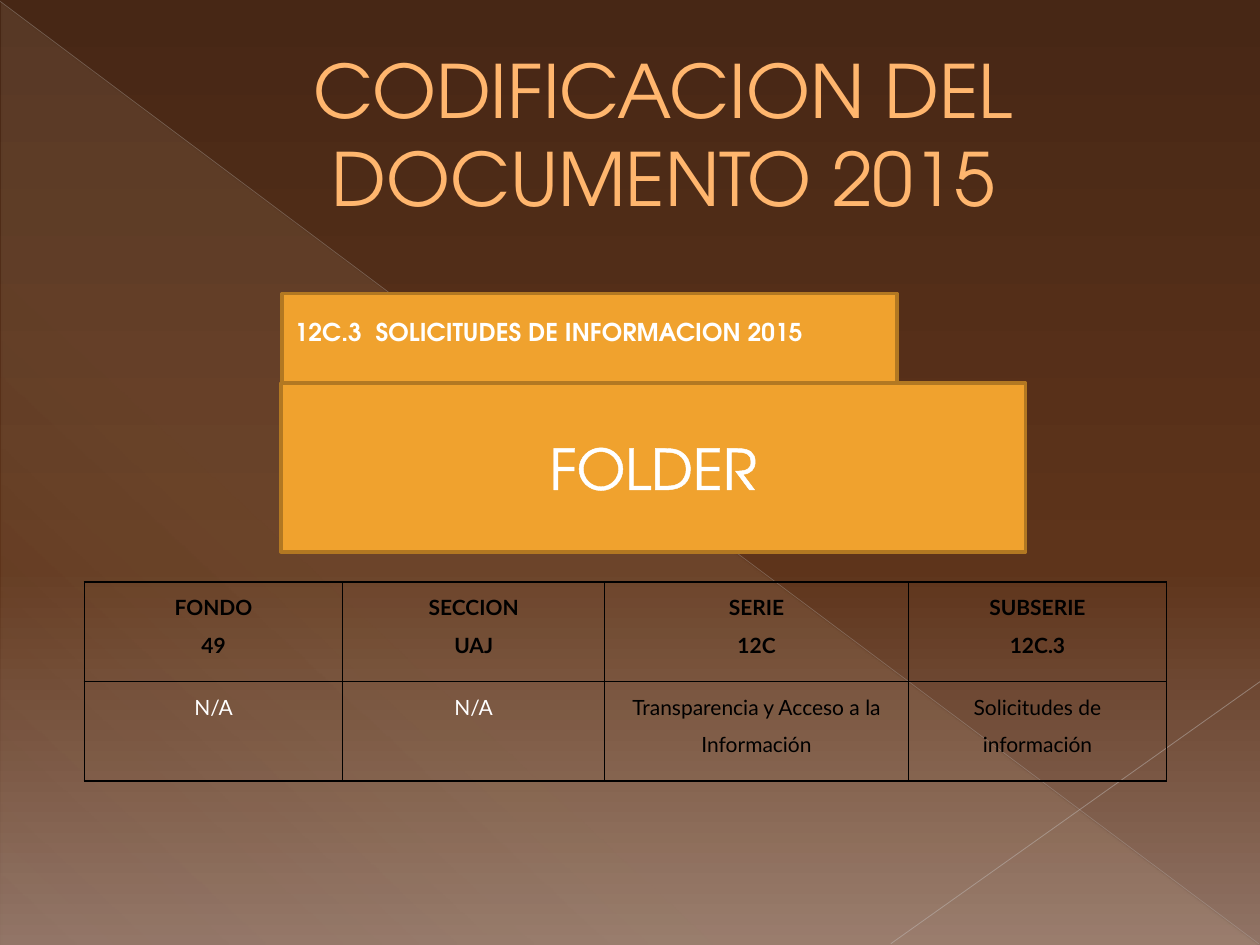
from lxml.etree import SubElement
from pptx import Presentation
from pptx.dml.color import RGBColor
from pptx.enum.shapes import MSO_CONNECTOR, MSO_SHAPE
from pptx.enum.text import MSO_ANCHOR, PP_ALIGN
from pptx.oxml.ns import qn
from pptx.util import Inches, Pt

HEADING_FONT = "TeX Gyre Adventor"
TABLE_FONT = "Lato"

BLACK = RGBColor(0x00, 0x00, 0x00)
WHITE = RGBColor(0xFF, 0xFF, 0xFF)
PEACH = RGBColor(0xFF, 0xB6, 0x6E)
TITLE_EDGE = RGBColor(0xA6, 0x70, 0x20)
FOLDER_FILL = RGBColor(0xF0, 0xA2, 0x2E)
FOLDER_EDGE = RGBColor(0xB2, 0x78, 0x22)
CREAM = RGBColor(0xFB, 0xEE, 0xC9)
DIAGONAL_GREY = RGBColor(0xBC, 0xB7, 0xB4)
CORNER_GREY = RGBColor(0xC4, 0xBF, 0xBD)
BROWN_DARK = RGBColor(0x47, 0x27, 0x15)
BROWN = RGBColor(0x5E, 0x34, 0x1B)
BROWN_LIGHT = RGBColor(0x90, 0x73, 0x65)

COLUMN_WIDTHS = [2.05, 2.08, 2.41, 2.05]
ROW_HEIGHT = 0.79
HEADERS = ["FONDO\n49", "SECCION\nUAJ", "SERIE\n12C", "SUBSERIE\n12C.3"]
VALUES = [
    ("N/A", WHITE),
    ("N/A", WHITE),
    ("Transparencia y Acceso a la Información", BLACK),
    ("Solicitudes de información", BLACK),
]


def add_color(parent, color, opacity=100):
    element = SubElement(parent, qn("a:srgbClr"), val=str(color))
    if opacity < 100:
        SubElement(element, qn("a:alpha"), val=str(opacity * 1000))


def set_gradient(fill, owner, stops, angle):
    """Fill with (position, colour, opacity) stops at a clockwise angle."""
    fill.gradient()
    gradient = owner.find(".//" + qn("a:gradFill"))
    gradient.find(qn("a:lin")).set("ang", str(angle * 60000))
    stop_list = gradient.find(qn("a:gsLst"))
    stop_list.clear()
    for position, color, opacity in stops:
        stop = SubElement(stop_list, qn("a:gs"), pos=str(position * 1000))
        add_color(stop, color, opacity)


def format_text(text_frame, font_name, size, color, bold=False, align=PP_ALIGN.CENTER):
    for paragraph in text_frame.paragraphs:
        paragraph.alignment = align
        for run in paragraph.runs:
            run.font.name = font_name
            run.font.size = Pt(size)
            run.font.bold = bold
            run.font.color.rgb = color


def outline_text(text_frame, color, width):
    for paragraph in text_frame.paragraphs:
        for run in paragraph.runs:
            properties = run.font._element
            line = SubElement(properties, qn("a:ln"), w=str(Pt(width)))
            add_color(SubElement(line, qn("a:solidFill")), color)
            properties.insert(0, line)


def add_line(slide, start, end, color, width, opacity):
    points = [Inches(value) for value in (*start, *end)]
    connector = slide.shapes.add_connector(MSO_CONNECTOR.STRAIGHT, *points)
    connector.line.color.rgb = color
    connector.line.width = Pt(width)
    properties = connector._element.spPr
    color_element = properties.find(".//" + qn("a:srgbClr"))
    SubElement(color_element, qn("a:alpha"), val=str(opacity * 1000))
    SubElement(properties, qn("a:effectLst"))


def add_backdrop(slide):
    set_gradient(
        slide.background.fill, slide._element,
        [(0, BROWN_DARK, 100), (60, BROWN, 100), (100, BROWN_LIGHT, 100)], 90,
    )
    triangle = slide.shapes.add_shape(
        MSO_SHAPE.RIGHT_TRIANGLE, Inches(0.01), Inches(0.02), Inches(9.98), Inches(7.48)
    )
    triangle.shadow.inherit = False
    triangle.line.fill.background()
    set_gradient(
        triangle.fill, triangle._element,
        [(0, CREAM, 10), (70, CREAM, 8), (100, CREAM, 1)], 133,
    )
    add_line(slide, (0, 0.01), (9.99, 7.49), DIAGONAL_GREY, 0.39, 35)
    add_line(slide, (10, 5.41), (7.07, 7.49), CORNER_GREY, 0.47, 45)


def add_title(slide, text):
    title = slide.shapes.title
    title.left, title.top = Inches(0.5), Inches(0.29)
    title.width, title.height = Inches(9), Inches(1.53)
    text_frame = title.text_frame
    text_frame.text = text
    text_frame.vertical_anchor = MSO_ANCHOR.MIDDLE
    format_text(text_frame, HEADING_FONT, 42, PEACH)
    outline_text(text_frame, TITLE_EDGE, 0.5)
    indent = text_frame.paragraphs[0]._p.get_or_add_pPr()
    indent.set("marL", str(Inches(0.53)))
    indent.set("indent", "0")
    # The title stands in front of the backdrop.
    slide.shapes._spTree.append(title._element)


def add_folder_part(slide, left, top, width, height, text):
    shape = slide.shapes.add_shape(
        MSO_SHAPE.RECTANGLE, Inches(left), Inches(top), Inches(width), Inches(height)
    )
    shape.shadow.inherit = False
    shape.fill.solid()
    shape.fill.fore_color.rgb = FOLDER_FILL
    shape.line.color.rgb = FOLDER_EDGE
    shape.line.width = Pt(2)
    text_frame = shape.text_frame
    text_frame.text = text
    text_frame.word_wrap = True
    text_frame.vertical_anchor = MSO_ANCHOR.MIDDLE
    return text_frame


def add_folder(slide):
    tab = add_folder_part(
        slide, 2.24, 2.33, 4.88, 0.71, "12C.3  SOLICITUDES DE INFORMACION 2015"
    )
    tab.margin_bottom = Inches(0.16)
    format_text(tab, HEADING_FONT, 14, WHITE, bold=True, align=PP_ALIGN.LEFT)
    body = add_folder_part(slide, 2.23, 3.04, 5.91, 1.34, "FOLDER")
    format_text(body, HEADING_FONT, 32, WHITE)
    outline_text(body, WHITE, 1.45)


def set_borders(cell, color, width):
    properties = cell._tc.get_or_add_tcPr()
    for index, side in enumerate(("a:lnL", "a:lnR", "a:lnT", "a:lnB")):
        line = SubElement(properties, qn(side), w=str(Pt(width)))
        add_color(SubElement(line, qn("a:solidFill")), color)
        properties.insert(index, line)


def fill_cell(cell, text, color, bold):
    cell.fill.background()
    cell.margin_left = cell.margin_right = Inches(0.07)
    cell.margin_top = cell.margin_bottom = 0
    cell.text_frame.text = text
    format_text(cell.text_frame, TABLE_FONT, 12, color, bold)
    for paragraph in cell.text_frame.paragraphs:
        paragraph.line_spacing = 1.5
    set_borders(cell, BLACK, 1)


def add_code_table(slide):
    table = slide.shapes.add_table(
        2, len(COLUMN_WIDTHS), Inches(0.67), Inches(4.62),
        Inches(sum(COLUMN_WIDTHS)), Inches(2 * ROW_HEIGHT),
    ).table
    table.first_row = table.horz_banding = False
    for row in table.rows:
        row.height = Inches(ROW_HEIGHT)
    for index, width in enumerate(COLUMN_WIDTHS):
        table.columns[index].width = Inches(width)
        fill_cell(table.cell(0, index), HEADERS[index], BLACK, True)
        fill_cell(table.cell(1, index), *VALUES[index], False)


def main():
    presentation = Presentation()
    presentation.slide_width = Inches(10)
    presentation.slide_height = Inches(7.5)
    slide = presentation.slides.add_slide(presentation.slide_layouts[5])
    add_backdrop(slide)
    add_title(slide, "CODIFICACION DEL DOCUMENTO 2015")
    add_code_table(slide)
    add_folder(slide)
    presentation.save("out.pptx")


if __name__ == "__main__":
    main()
